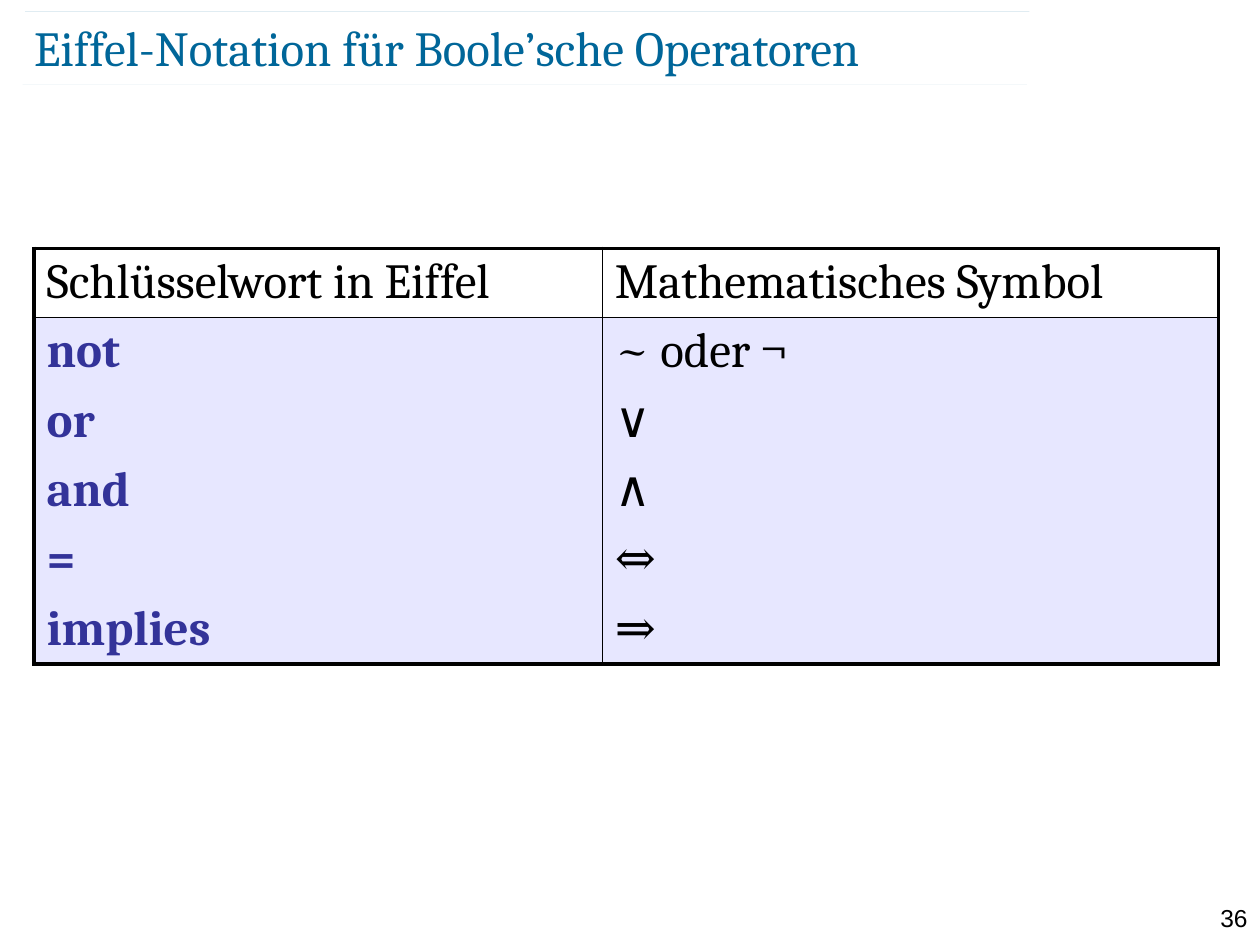
from pptx import Presentation
from pptx.dml.color import RGBColor
from pptx.enum.shapes import MSO_CONNECTOR
from pptx.enum.text import MSO_ANCHOR, PP_ALIGN
from pptx.oxml.ns import qn
from pptx.util import Inches, Pt
from lxml.etree import SubElement

TEAL = RGBColor(0x00, 0x66, 0x99)
INDIGO = RGBColor(0x33, 0x33, 0x99)
LAVENDER = RGBColor(0xE7, 0xE7, 0xFF)
BLACK = RGBColor(0, 0, 0)

ROWS = [
    ("Schlüsselwort in Eiffel", "Mathematisches Symbol"),
    ("not", "~ oder ¬"),
    ("or", "∨"),
    ("and", "∧"),
    ("=", "⇔"),
    ("implies", "⇒"),
]


def set_border(cell, side, width):
    """Draw one cell border in black; a width of 0 hides it."""
    ln = SubElement(cell._tc.get_or_add_tcPr(), qn(f"a:ln{side}"), w=str(Pt(width)))
    if width:
        fill = SubElement(ln, qn("a:solidFill"))
        SubElement(fill, qn("a:srgbClr"), val=str(BLACK))
    else:
        SubElement(ln, qn("a:noFill"))


def style_run(r, size, name, color, bold=False):
    r.font.size = Pt(size)
    r.font.name = name
    r.font.color.rgb = color
    r.font.bold = bold


prs = Presentation()
prs.slide_width, prs.slide_height = Inches(10), Inches(7.5)
s = prs.slides.add_slide(prs.slide_layouts[5])

# Hairlines around the title
for x, y in [(0.18, 0.67), (0.2, 0.09)]:
    line = s.shapes.add_connector(
        MSO_CONNECTOR.STRAIGHT, Inches(x), Inches(y), Inches(x + 7.97), Inches(y))
    line.line.color.rgb = TEAL
    line.line.width = Pt(0.1)
    color = line.line._ln.find(".//" + qn("a:srgbClr"))
    SubElement(color, qn("a:alpha"), val="35000")
    SubElement(line._element.spPr, qn("a:effectLst"))

# Title
title = s.shapes.title
title.left, title.top = Inches(0.27), Inches(0.13)
title.width, title.height = Inches(8.69), Inches(0.48)
tf = title.text_frame
tf.margin_left = tf.margin_right = tf.margin_top = tf.margin_bottom = 0
tf.vertical_anchor = MSO_ANCHOR.MIDDLE
tf.text = "Eiffel-Notation für Boole’sche Operatoren"
p = tf.paragraphs[0]
p.alignment = PP_ALIGN.LEFT
style_run(p.runs[0], 28, "Cambria", TEAL)

# Operator table: heavy frame, thin column rule and header rule
last = len(ROWS) - 1
table = s.shapes.add_table(
    len(ROWS), 2, Inches(0.27), Inches(1.97), Inches(9.4), Inches(3.3)).table
table.columns[0].width, table.columns[1].width = Inches(4.51), Inches(4.89)
for i, row in enumerate(ROWS):
    table.rows[i].height = Inches(0.55)
    for j, text in enumerate(row):
        cell = table.cell(i, j)
        set_border(cell, "L", 1 if j else 2.25)
        set_border(cell, "R", 2.25 if j else 1)
        set_border(cell, "T", {0: 2.25, 1: 1}.get(i, 0))
        set_border(cell, "B", {0: 1, last: 2.25}.get(i, 0))
        if i == 0:
            cell.fill.background()
        else:
            cell.fill.solid()
            cell.fill.fore_color.rgb = LAVENDER
        cell.text = text
        keyword = i > 0 and j == 0
        style_run(cell.text_frame.paragraphs[0].runs[0], 28, "Cambria",
                  INDIGO if keyword else BLACK, keyword)

# Page number
box = s.shapes.add_textbox(Inches(9.45), Inches(7.16), Inches(0.55), Inches(0.24))
tf = box.text_frame
tf.word_wrap = True
tf.margin_top = tf.margin_bottom = 0
tf.vertical_anchor = MSO_ANCHOR.MIDDLE
tf.text = "36"
p = tf.paragraphs[0]
p.alignment = PP_ALIGN.RIGHT
style_run(p.runs[0], 14, "Arial", BLACK)

prs.save("out.pptx")
